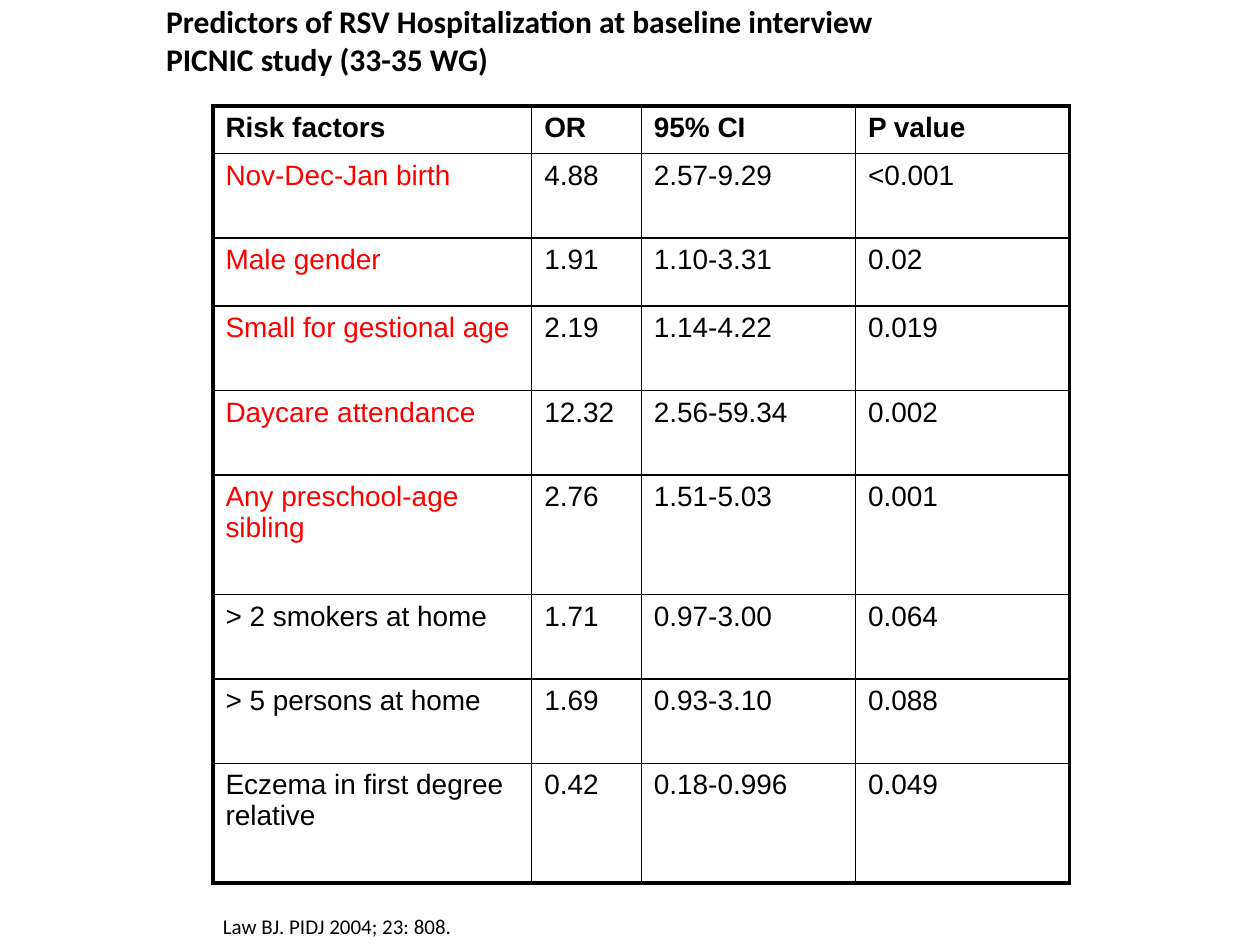
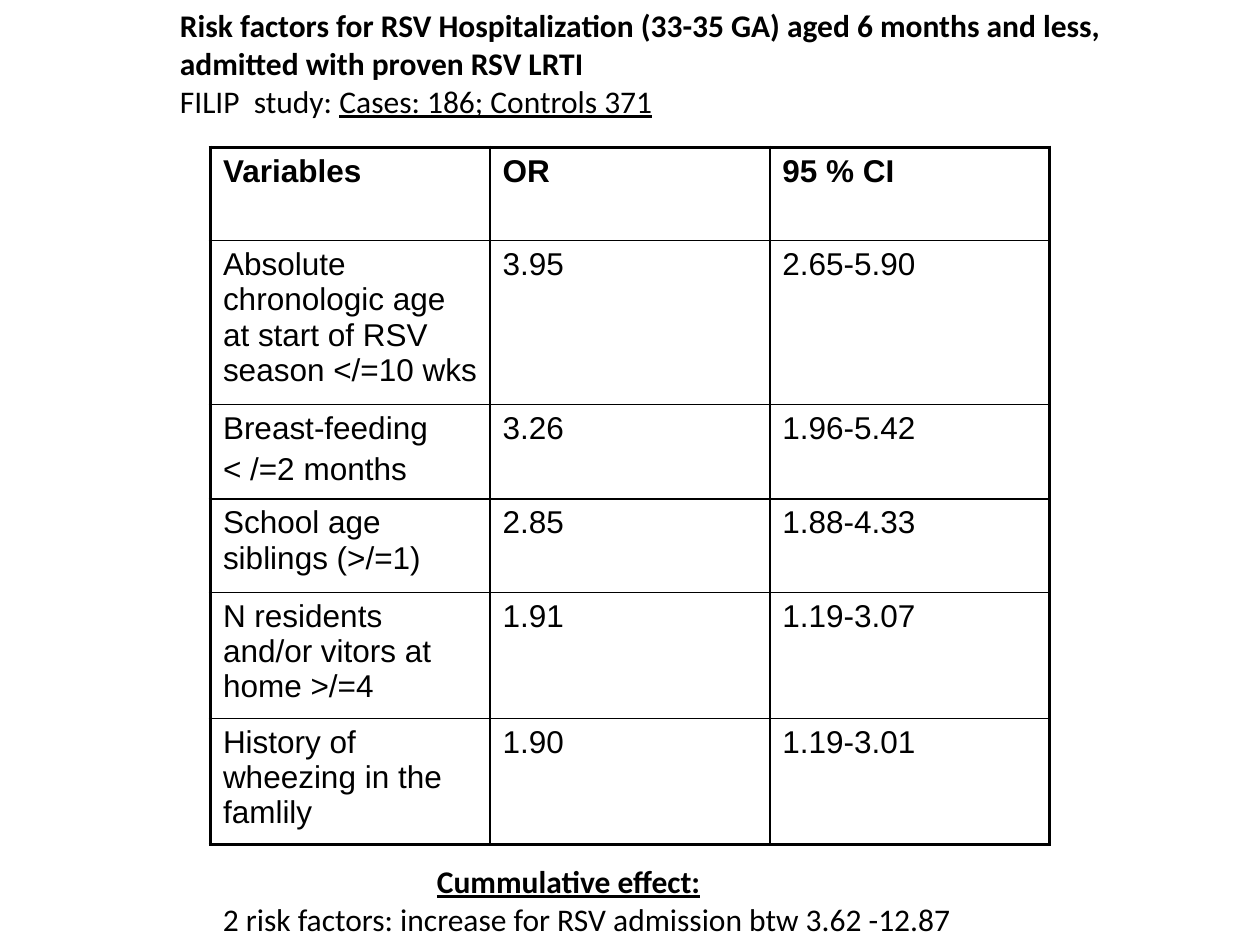
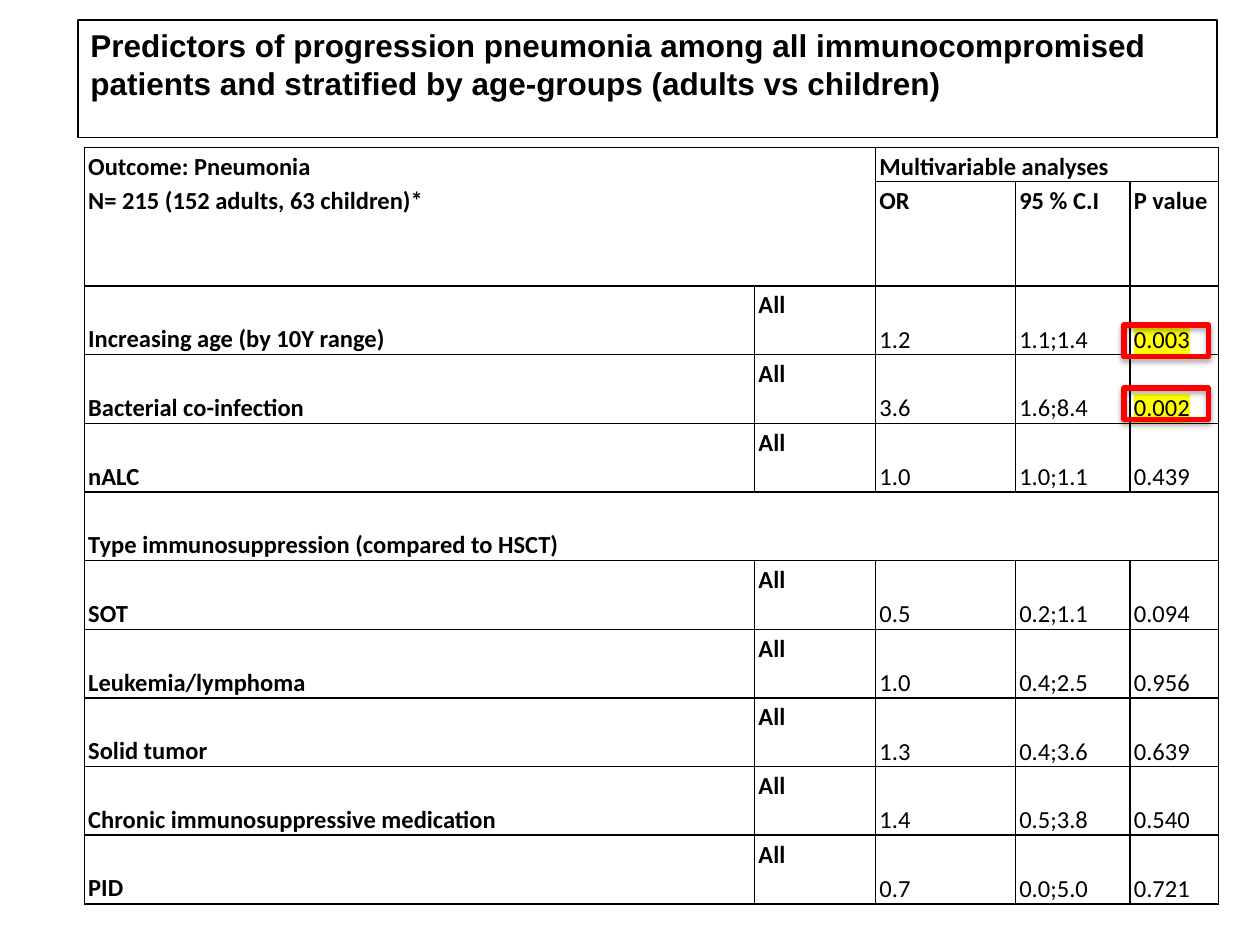
from pptx import Presentation
from pptx.dml.color import RGBColor
from pptx.enum.shapes import MSO_SHAPE
from pptx.enum.text import MSO_ANCHOR, PP_ALIGN
from pptx.oxml.ns import qn
from pptx.util import Inches, Pt
from lxml.etree import SubElement

RECT = MSO_SHAPE.RECTANGLE
TOP, BOTTOM = MSO_ANCHOR.TOP, MSO_ANCHOR.BOTTOM
LEFT = PP_ALIGN.LEFT

HUE = {"ink": "000000", "red": "FF0000", "paper": "FFFFFF", "mark": "FFFF00"}
HEAD = {"name": "Calibri", "size": Pt(18), "bold": True}
BODY = {**HEAD, "bold": False}
NOTE = {**BODY, "size": Pt(12)}
THIN, THICK = Pt(1), Pt(2.25)

deck = Presentation()
deck.slide_width, deck.slide_height = Inches(10), Inches(7.5)
U = deck.slide_width // 100  # the slide is a grid of 100 columns and 75 rows


def write(frame, lines, hue="ink", gap=0):
    """Each line is a list of (text, format) runs."""
    frame.word_wrap = True
    for i, line in enumerate(lines):
        para = frame.paragraphs[0] if i == 0 else frame.add_paragraph()
        para.alignment = LEFT
        if i and gap:
            para.space_before = Pt(gap)
        for text, look in line:
            run = para.add_run()
            run.text = text
            run.font.color.rgb = RGBColor.from_string(HUE[hue])
            for key, value in look.items():
                setattr(run.font, key, value)


def grid(page, x, y, cols, rows, edge):
    """Add an unfilled table with thin inner lines and an outer edge."""
    table = page.shapes.add_table(len(rows), len(cols), int(x * U), int(y * U),
                                  int(sum(cols) * U), int(sum(rows) * U)).table
    table.first_row = table.horz_banding = False
    for col, wide in zip(table.columns, cols):
        col.width = int(wide * U)
    for row, high in zip(table.rows, rows):
        row.height = int(high * U)
    for r in range(len(rows)):
        for c in range(len(cols)):
            cell = table.cell(r, c)
            props = cell._tc.get_or_add_tcPr()
            outer = {"L": c == 0, "R": c == len(cols) - 1,
                     "T": r == 0, "B": r == len(rows) - 1}
            for side, out in outer.items():
                line = SubElement(props, qn(f"a:ln{side}"), w=str(edge if out else THIN))
                fill = SubElement(line, qn("a:solidFill"))
                SubElement(fill, qn("a:srgbClr"), val=HUE["ink"])
            cell.fill.background()
    return table


pages = [deck.slides.add_slide(deck.slide_layouts[6]) for _ in range(3)]

# Titles and notes
texts = [
    (0, (12.2, -0.3, 59, 7.1), [
        [("Predictors of RSV Hospitalization at baseline interview", HEAD)],
        [("PICNIC study (33-35 WG)", HEAD)]]),
    (0, (16.7, 72, 40.8, 3), [[("Law BJ. PIDJ 2004; 23: 808.", NOTE)]]),
    (1, (13.3, 0, 76.7, 10.1), [
        [("Risk factors for RSV Hospitalization (33-35 GA) aged 6 months and less, "
          "admitted with proven RSV LRTI", HEAD)],
        [("FILIP  study: ", BODY),
         ("Cases: 186; Controls 371", {**BODY, "underline": True})]]),
    (1, (16.7, 67.9, 67.7, 7.1), [
        [("Cummulative effect:", {**HEAD, "underline": True})],
        [("2 risk factors: increase for RSV admission btw 3.62 -12.87", BODY)]]),
]
for page, box, lines in texts:
    note = pages[page].shapes.add_textbox(*(int(n * U) for n in box))
    write(note.text_frame, lines)
# The last note's heading is indented
note.text_frame.paragraphs[0]._p.get_or_add_pPr().set("marL", str(17 * U))

# Slides 1 and 2: odds ratio tables
picnic = [
    ("Risk factors", "OR", "95% CI", "P value"),
    ("Nov-Dec-Jan birth", "4.88", "2.57-9.29", "<0.001"),
    ("Male gender", "1.91", "1.10-3.31", "0.02"),
    ("Small for gestional age", "2.19", "1.14-4.22", "0.019"),
    ("Daycare attendance", "12.32", "2.56-59.34", "0.002"),
    ("Any preschool-age sibling", "2.76", "1.51-5.03", "0.001"),
    ("> 2 smokers at home", "1.71", "0.97-3.00", "0.064"),
    ("> 5 persons at home", "1.69", "0.93-3.10", "0.088"),
    ("Eczema in first degree relative", "0.42", "0.18-0.996", "0.049"),
]
filip = [
    ("Variables", "OR", "95 % CI"),
    ("Absolute chronologic age at start of RSV season </=10 wks", "3.95", "2.65-5.90"),
    ("Breast-feeding\n< /=2 months", "3.26", "1.96-5.42"),
    ("School age siblings (>/=1)", "2.85", "1.88-4.33"),
    ("N residents and/or vitors at home >/=4", "1.91", "1.19-3.07"),
    ("History of wheezing in the famlily", "1.90", "1.19-3.01"),
]
odds = [
    (0, picnic, 16.9, 8.4, (25.3, 8.7, 17, 17),
     (3.8, 6.7, 5.4, 6.7, 6.7, 9.5, 6.7, 6.7, 9.5), 16, range(1, 6)),
    (1, filip, 16.7, 11.7, (22.2,) * 3, (7.4, 13, 7.5, 7.4, 10, 10), 18, ()),
]
for page, data, x, y, cols, rows, size, reds in odds:
    table = grid(pages[page], x, y, cols, rows, THICK)
    for r, row in enumerate(data):
        look = {"name": "Arial", "size": Pt(size), "bold": r == 0}
        for c, text in enumerate(row):
            hue = "red" if c == 0 and r in reds else "ink"
            lines = [[(part, look)] for part in text.split("\n")]
            write(table.cell(r, c).text_frame, lines, hue, size / 5)

# Slide 3: pneumonia table
pneumo = [
    ("Outcome: Pneumonia\nN= 215 (152 adults, 63 children)*", "", "Multivariable analyses", "", ""),
    ("", "", "OR", "95 % C.I", "P value"),
    ("Increasing age (by 10Y range)", "All", "1.2", "1.1;1.4", "0.003"),
    ("Bacterial co-infection", "All", "3.6", "1.6;8.4", "0.002"),
    ("nALC", "All", "1.0", "1.0;1.1", "0.439"),
    ("Type immunosuppression (compared to HSCT)", "", "", "", ""),
    ("SOT", "All", "0.5", "0.2;1.1", "0.094"),
    ("Leukemia/lymphoma", "All", "1.0", "0.4;2.5", "0.956"),
    ("Solid tumor", "All", "1.3", "0.4;3.6", "0.639"),
    ("Chronic immunosuppressive medication", "All", "1.4", "0.5;3.8", "0.540"),
    ("PID", "All", "0.7", "0.0;5.0", "0.721"),
]
last = pages[2]
table = grid(last, 6.7, 11.7, (53.2, 9.6, 11.1, 9.1, 7), (2.7, 8.3) + (5.45,) * 9, THIN)
for r1, c1, r2, c2 in ((0, 0, 1, 1), (0, 2, 0, 4), (5, 0, 5, 4)):
    table.cell(r1, c1).merge(table.cell(r2, c2))
for r, row in enumerate(pneumo):
    for c, text in enumerate(row):
        cell = table.cell(r, c)
        cell.margin_left = cell.margin_right = Inches(0.03)
        cell.margin_top = cell.margin_bottom = 0
        if not text:
            continue
        value = r > 1 and c > 1
        if value:
            cell.vertical_anchor = BOTTOM
        elif r > 1 and c == 0:
            cell.margin_top = Inches(0.27)
        look = {**HEAD, "size": Pt(14), "bold": not value}
        write(cell.text_frame, [[(part, look)] for part in text.split("\n")])
        for para in cell.text_frame.paragraphs:
            para.line_spacing = 1.15

# Marked P values with their red frames
for i in range(2):
    props = table.cell(2 + i, 4).text_frame.paragraphs[0].runs[0]._r.get_or_add_rPr()
    glow = SubElement(props, qn("a:highlight"))
    SubElement(glow, qn("a:srgbClr"), val=HUE["mark"])
    props.find(qn("a:solidFill")).addnext(glow)
    frame = last.shapes.add_shape(RECT, *(int(n * U) for n in (89.2, 25.8 + 5 * i, 6.7, 2.5)))
    frame.fill.background()
    frame.line.color.rgb = RGBColor.from_string(HUE["red"])
    frame.line.width = Pt(3)
    frame.shadow.inherit = False
    cast = SubElement(frame._element.spPr.find(qn("a:effectLst")), qn("a:outerShdw"),
                      blurRad=str(Pt(3.1)), dist=str(Pt(1.8)), dir="5400000", rotWithShape="0")
    shade = SubElement(cast, qn("a:srgbClr"), val=HUE["ink"])
    SubElement(shade, qn("a:alpha"), val="35000")

# Boxed title
title = last.shapes.add_shape(RECT, *(int(n * U) for n in (6.2, 1.6, 90.4, 9.3)))
title.shadow.inherit = False
title.fill.solid()
title.fill.fore_color.rgb = RGBColor.from_string(HUE["paper"])
title.line.color.rgb = RGBColor.from_string(HUE["ink"])
title.line.width = Pt(0.75)
title.text_frame.vertical_anchor = TOP
write(title.text_frame, [[("Predictors of progression pneumonia among all immunocompromised patients "
                           "and stratified by age-groups (adults vs children)",
                           {**HEAD, "name": "Arial"})]])

deck.save("out.pptx")
